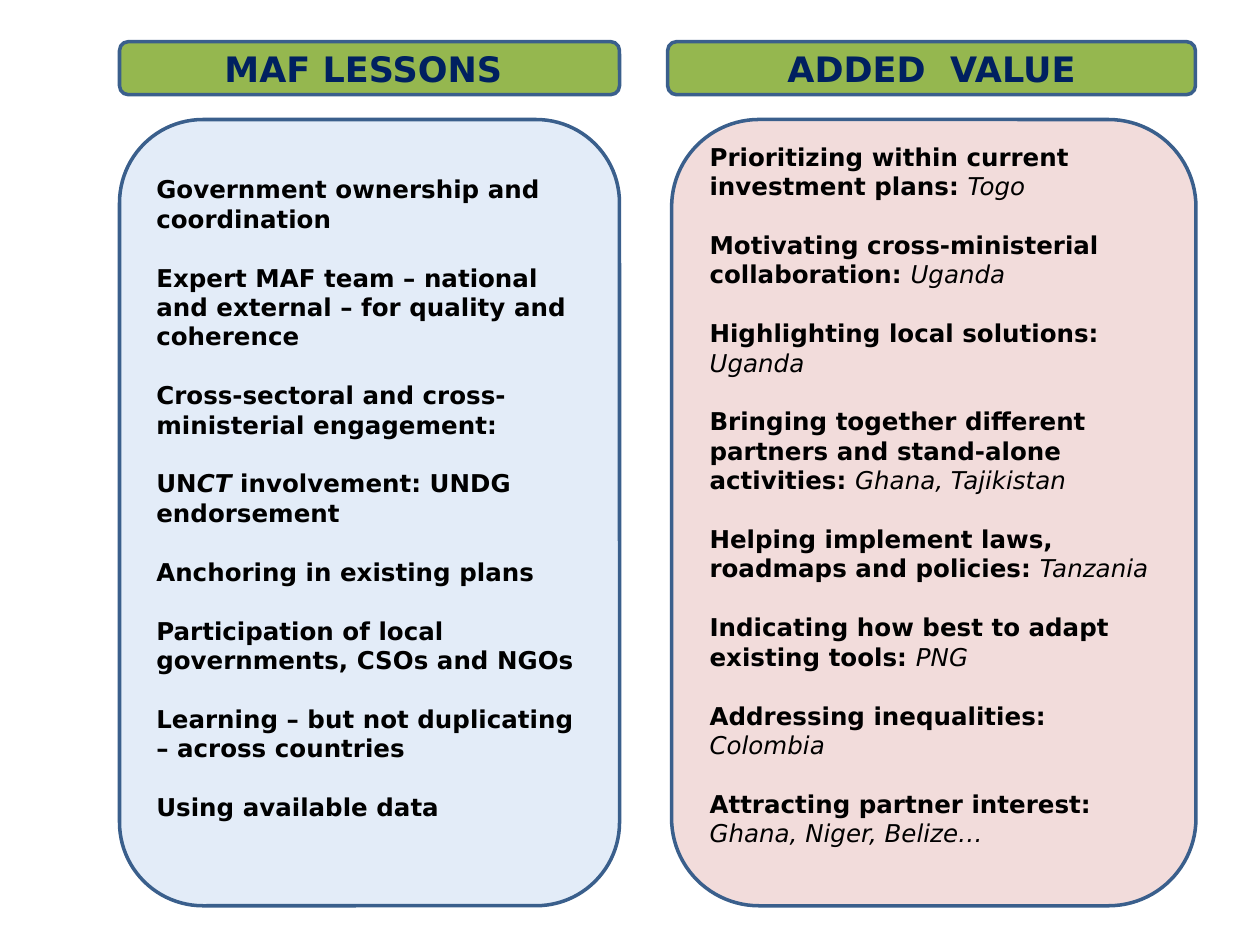
"""Build the slide that sets MAF lessons beside the value they added."""
from dataclasses import dataclass

import pptx
import pptx.dml.color
import pptx.enum.shapes
import pptx.enum.text
import pptx.util
from pptx.util import Cm


@dataclass(frozen=True)
class Theme:
    """Colours and type sizes of the slide."""
    font: str = "DejaVu Sans"
    outline: str = "3A5F8C"
    header_fill: str = "95B74F"
    header_text: str = "002060"
    lessons_fill: str = "E3ECF8"
    value_fill: str = "F2DCDB"
    body_text: str = "000000"
    header_size: float = 20
    body_size: float = 14
    paragraph_gap: float = 16.8
    outline_width: float = 2


THEME = Theme()
BOLD, ITALIC, BOLD_ITALIC = (True, False), (False, True), (True, True)

LESSONS = [
    [("Government ownership and coordination", BOLD)],
    [("Expert MAF team – national and external – for quality and coherence", BOLD)],
    [("Cross-sectoral and cross-ministerial engagement:", BOLD)],
    [("UN", BOLD), ("CT ", BOLD_ITALIC), ("involvement: UNDG endorsement", BOLD)],
    [("Anchoring in existing plans", BOLD)],
    [("Participation of local governments, CSOs and NGOs", BOLD)],
    [("Learning – but not duplicating – across countries", BOLD)],
    [("Using available data", BOLD)],
]

ADDED_VALUE = [
    ("Prioritizing within current investment plans: ", "Togo"),
    ("Motivating cross-ministerial collaboration: ", "Uganda"),
    ("Highlighting local solutions: ", "Uganda"),
    ("Bringing together different partners and stand-alone activities: ", "Ghana, Tajikistan"),
    ("Helping implement laws, roadmaps and policies: ", "Tanzania"),
    ("Indicating how best to adapt existing tools: ", "PNG"),
    ("Addressing inequalities: ", "Colombia"),
    ("Attracting partner interest: ", "Ghana, Niger, Belize…"),
]


def rgb(value):
    """Turn a hex string into a colour."""
    return pptx.dml.color.RGBColor.from_string(value)


def add_box(slide, left, top, width, height, fill):
    """Add an outlined rounded box and return its text frame."""
    shape = slide.shapes.add_shape(
        pptx.enum.shapes.MSO_SHAPE.ROUNDED_RECTANGLE, left, top, width, height)
    shape.shadow.inherit = False
    shape.fill.solid()
    shape.fill.fore_color.rgb = rgb(fill)
    shape.line.color.rgb = rgb(THEME.outline)
    shape.line.width = pptx.util.Pt(THEME.outline_width)
    text_frame = shape.text_frame
    text_frame.word_wrap = True
    text_frame.vertical_anchor = pptx.enum.text.MSO_ANCHOR.MIDDLE
    return text_frame


def style_run(run, size, color, style):
    """Set the font of a run."""
    run.font.name = THEME.font
    run.font.size = pptx.util.Pt(size)
    run.font.color.rgb = rgb(color)
    run.font.bold, run.font.italic = style


def add_header(slide, left, width, title):
    """Add a column heading."""
    text_frame = add_box(slide, left, Cm(0.84), width, Cm(1.07), THEME.header_fill)
    text_frame.text = title
    paragraph = text_frame.paragraphs[0]
    paragraph.alignment = pptx.enum.text.PP_ALIGN.CENTER
    style_run(paragraph.runs[0], THEME.header_size, THEME.header_text, BOLD)


def add_panel(slide, left, width, fill, points, bottom_margin):
    """Add a column panel with one spaced paragraph per point."""
    text_frame = add_box(slide, left, Cm(2.41), width, Cm(15.85), fill)
    text_frame.margin_bottom = bottom_margin
    for index, point in enumerate(points):
        paragraph = text_frame.add_paragraph() if index else text_frame.paragraphs[0]
        paragraph.alignment = pptx.enum.text.PP_ALIGN.LEFT
        if index:
            paragraph.space_before = pptx.util.Pt(THEME.paragraph_gap)
        for text, style in point:
            run = paragraph.add_run()
            run.text = text
            style_run(run, THEME.body_size, THEME.body_text, style)


def main():
    """Build and save the presentation."""
    presentation = pptx.Presentation()
    presentation.slide_width, presentation.slide_height = Cm(25.4), Cm(19.05)
    slide = presentation.slides.add_slide(presentation.slide_layouts[6])
    value_points = [[(claim, BOLD), (places, ITALIC)] for claim, places in ADDED_VALUE]
    add_panel(slide, Cm(13.54), Cm(10.57), THEME.value_fill, value_points, Cm(0.85))
    add_panel(slide, Cm(2.41), Cm(10.08), THEME.lessons_fill, LESSONS, Cm(0.72))
    add_header(slide, Cm(2.41), Cm(10.08), "MAF LESSONS ")
    add_header(slide, Cm(13.46), Cm(10.64), "ADDED  VALUE")
    presentation.save("out.pptx")


if __name__ == "__main__":
    main()
